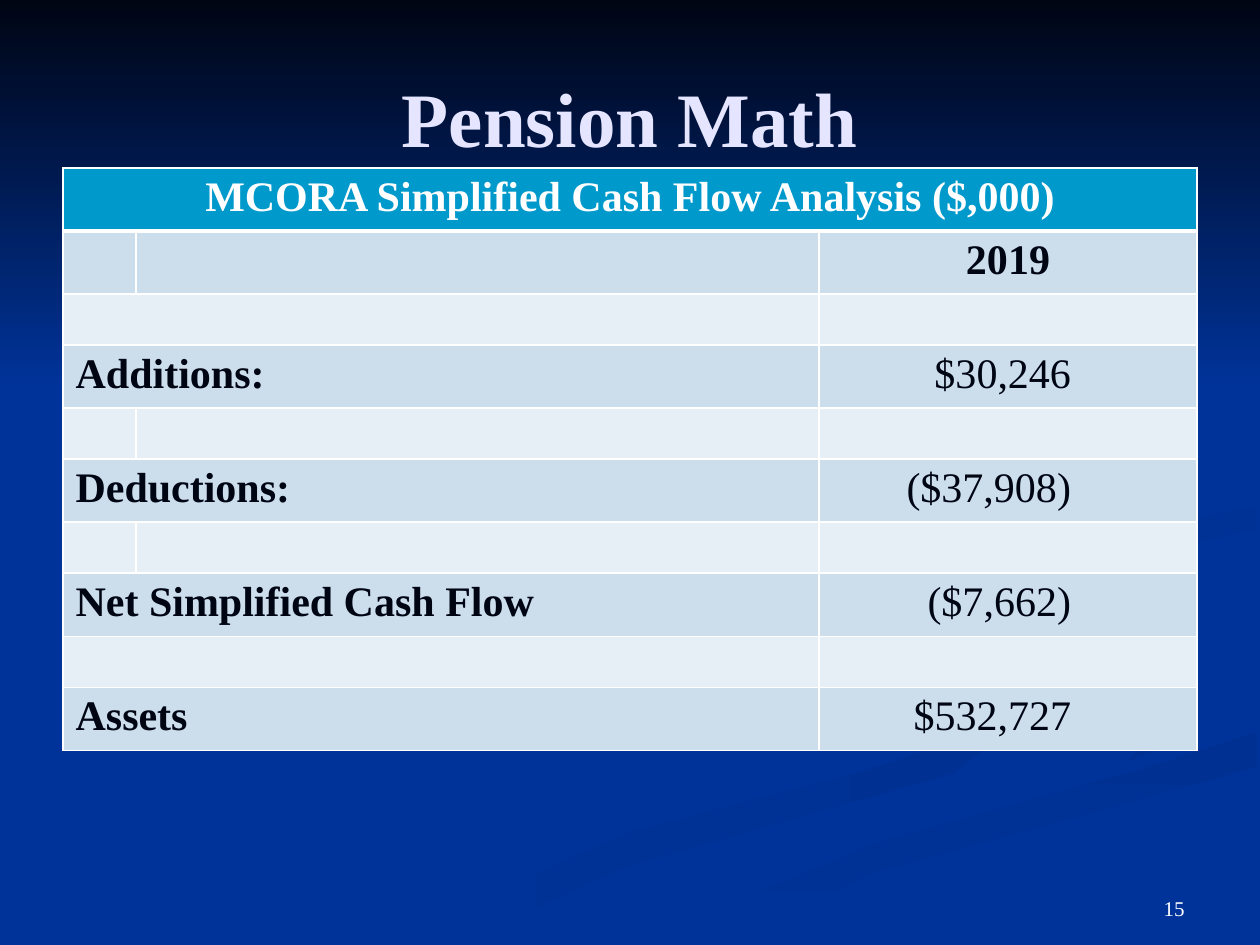
import pptx
import pptx.util
import pptx.dml.color
import pptx.enum.shapes
import pptx.enum.text
import pptx.oxml
import pptx.oxml.ns
import lxml.etree

RGB = pptx.dml.color.RGBColor
ALIGN = pptx.enum.text.PP_ALIGN
ANCHOR = pptx.enum.text.MSO_ANCHOR

SCALE = 914400 / 126  # EMU in one px
FONT = "Times New Roman"
BLUE = RGB(0x00, 0x33, 0x99)
DEEP_BLUE = RGB(0x00, 0x30, 0x91)
NIGHT = RGB(0x00, 0x05, 0x14)
LAVENDER = RGB(0xE5, 0xE5, 0xFF)
WHITE = RGB(0xFF, 0xFF, 0xFF)
HEADER = RGB(0x00, 0x99, 0xCC)
BAND = RGB(0xCC, 0xDE, 0xEC)
PALE = RGB(0xE7, 0xEF, 0xF6)

# Wave outlines: points, first colour, last colour, clockwise angle
WAVES = [
    ([(984, 697), (723, 580), (984, 701), (975, 735), (862, 772), (629, 832),
      (378, 944), (455, 944), (629, 866), (953, 773), (1008, 732)],
     BLUE, DEEP_BLUE, 0),
    ([(1188, 718), (1140, 680), (912, 585), (1124, 697), (1157, 732),
      (1126, 762), (1174, 743)],
     BLUE, DEEP_BLUE, 45),
    ([(634, 944), (719, 944), (876, 872), (1257, 767), (1257, 732),
      (1159, 764), (877, 843)],
     DEEP_BLUE, BLUE, 90),
    ([(984, 580), (1041, 625), (1028, 578), (1257, 529), (1257, 507),
      (1034, 546)],
     DEEP_BLUE, BLUE, 45),
]

# Table rows: label, value, whether the first two columns are merged
ROWS = [
    ("", "2019", False),
    ("", "", True),
    ("Additions:", "$30,246", True),
    ("", "", False),
    ("Deductions:", "($37,908)", True),
    ("", "", False),
    ("Net Simplified Cash Flow", "($7,662)", True),
    ("", "", True),
    ("Assets", "$532,727", True),
]


def px(length):
    return pptx.util.Emu(round(length * SCALE))


def place(shape, box):
    shape.left, shape.top, shape.width, shape.height = map(px, box)


def set_text(frame, text, size, color, bold=False, align=ALIGN.LEFT):
    frame.text = text
    para = frame.paragraphs[0]
    para.alignment = align
    for span in para.runs:
        span.font.name = FONT
        span.font.size = pptx.util.Pt(size)
        span.font.color.rgb = color
        span.font.bold = bold


def shade(shape, first, last, angle):
    shape.shadow.inherit = False
    shape.line.fill.background()
    shape.fill.gradient()
    shape.fill.gradient_angle = (360 - angle) % 360
    for stop, color, position in zip(shape.fill.gradient_stops, (first, last), (0, 1)):
        stop.color.rgb = color
        stop.position = position


def add_backdrop(page, box):
    left, top, width, height = box
    page.background.fill.solid()
    page.background.fill.fore_color.rgb = BLUE
    for points, first, last, angle in WAVES:
        moved = [(left + x, top + y) for x, y in points]
        builder = page.shapes.build_freeform(*moved[0], scale=SCALE)
        builder.add_line_segments(moved[1:], close=True)
        shade(builder.convert_to_shape(), first, last, angle)
    # Dark sky fading into the blue
    sky = page.shapes.add_shape(pptx.enum.shapes.MSO_SHAPE.RECTANGLE,
                                px(left), px(top), px(width), px(388))
    shade(sky, NIGHT, BLUE, 90)


def add_title(page, box):
    title = page.shapes.title
    place(title, box)
    title.text_frame.vertical_anchor = ANCHOR.MIDDLE
    set_text(title.text_frame, "Pension Math", 44, LAVENDER, True, ALIGN.CENTER)
    # Bring the title in front of the backdrop
    page.shapes._spTree.append(title._element)


def add_page_number(page, box):
    number = page.shapes.add_textbox(*map(px, box))
    number.text_frame.word_wrap = True
    number.text_frame.vertical_anchor = ANCHOR.BOTTOM
    set_text(number.text_frame, "15", 12, WHITE, align=ALIGN.RIGHT)


def style_cell(cell, color, bottom=1):
    props = cell._tc.get_or_add_tcPr()
    for side, width in (("L", 1), ("R", 1), ("T", 1), ("B", bottom)):
        line = lxml.etree.SubElement(props, pptx.oxml.ns.qn("a:ln" + side),
                                     w=str(pptx.util.Pt(width)))
        solid = lxml.etree.SubElement(line, pptx.oxml.ns.qn("a:solidFill"))
        lxml.etree.SubElement(solid, pptx.oxml.ns.qn("a:srgbClr"), val=str(WHITE))
    cell.fill.solid()
    cell.fill.fore_color.rgb = color


def add_cash_flow(page, box):
    frame = page.shapes.add_table(len(ROWS) + 1, 3, *map(px, box))
    table = frame.table
    for column, width in zip(table.columns, (73, 683, 378)):
        column.width = px(width)

    # Header
    table.rows[0].height = px(59)
    for cell in table.rows[0].cells:
        style_cell(cell, HEADER, 3)
    header = table.cell(0, 0)
    header.merge(table.cell(0, 2))
    set_text(header.text_frame, "MCORA Simplified Cash Flow Analysis ($,000)",
             24, WHITE, True, ALIGN.CENTER)

    # Body
    for index, (label, value, merged) in enumerate(ROWS, 1):
        table.rows[index].height = px(59 if value else 51)
        for cell in table.rows[index].cells:
            style_cell(cell, BAND if value else PALE)
        first, second, last = table.rows[index].cells
        if merged:
            first.merge(second)
        if label:
            set_text(first.text_frame, label, 24, NIGHT, True)
            last.margin_right = px(126)
            set_text(last.text_frame, value, 24, NIGHT, align=ALIGN.RIGHT)
        elif value:
            set_text(last.text_frame, value, 24, NIGHT, True, ALIGN.CENTER)


def main():
    deck = pptx.Presentation()
    deck.slide_width, deck.slide_height = px(1260), px(945)
    page = deck.slides.add_slide(deck.slide_layouts[5])
    add_backdrop(page, (0, 0, 1260, 945))
    add_title(page, (63, 38, 1134, 158))
    add_page_number(page, (903, 861, 294, 66))
    add_cash_flow(page, (63, 168, 1134, 559))
    deck.save("out.pptx")


if __name__ == "__main__":
    main()
